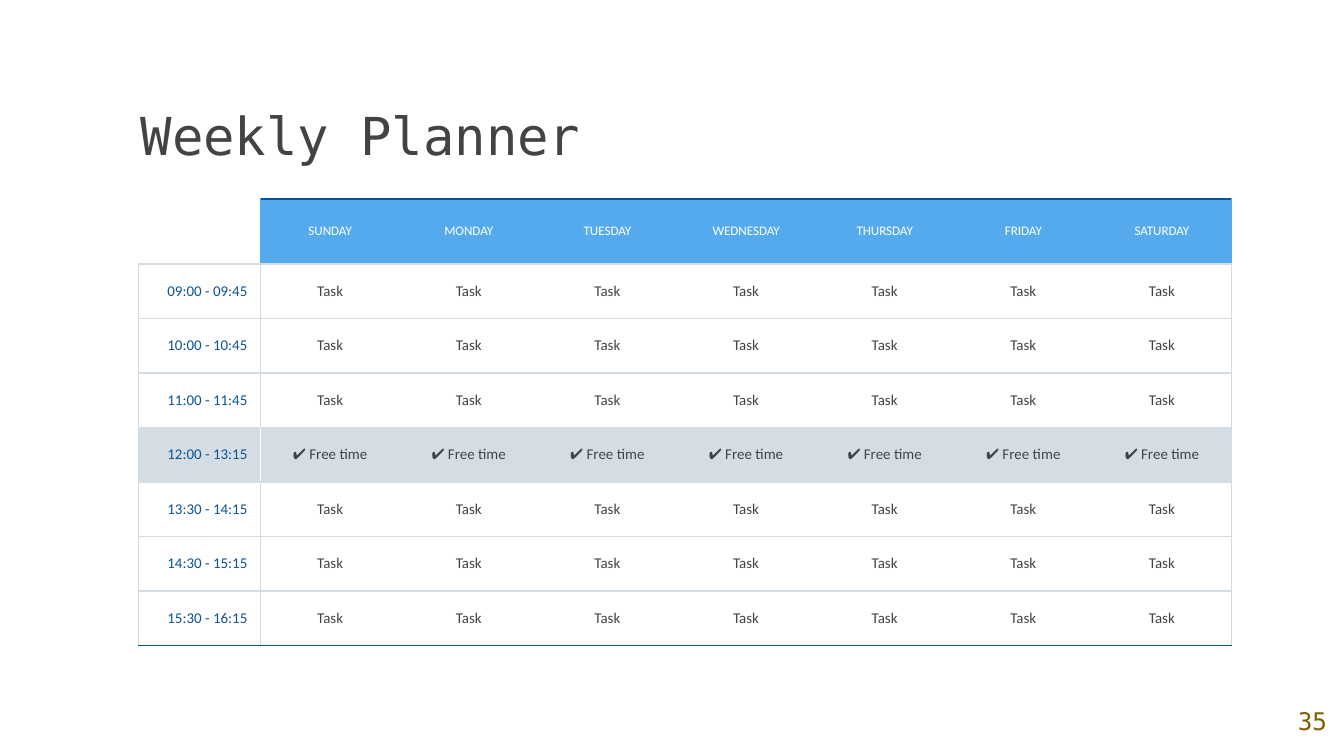
import pptx
import pptx.dml.color
import pptx.enum.text
import pptx.oxml.ns
import pptx.util
import lxml.etree

Cm = pptx.util.Cm
Align = pptx.enum.text.PP_ALIGN
Anchor = pptx.enum.text.MSO_ANCHOR

MONO, SANS = "DejaVu Sans Mono", "Calibri"
DARK, NAVY, SKY, PALE, WHITE = "434343", "0B5394", "55AAEE", "D5DDE4", "FFFFFF"
INSET = Cm(0.25)


def write(frame, text, size=8, font=SANS, color=DARK, align=Align.CENTER):
    para = frame.paragraphs[0]
    para.alignment = align
    span = para.add_run()
    span.text = text
    span.font.size = pptx.util.Pt(size)
    span.font.name = font
    span.font.color.rgb = pptx.dml.color.RGBColor.from_string(color)


def set_borders(cell, **colors):
    """Draw the left, right, top and bottom edges; None leaves an edge bare."""
    properties = cell._tc.get_or_add_tcPr()
    qn = pptx.oxml.ns.qn
    for side in ("L", "R", "T", "B"):
        line = lxml.etree.SubElement(properties, qn("a:ln" + side), w="9525")
        if colors[side] is None:
            lxml.etree.SubElement(line, qn("a:noFill"))
        else:
            solid = lxml.etree.SubElement(line, qn("a:solidFill"))
            lxml.etree.SubElement(solid, qn("a:srgbClr"), val=colors[side])


deck = pptx.Presentation()
deck.slide_width, deck.slide_height = Cm(25.4), Cm(14.29)
page = deck.slides.add_slide(deck.slide_layouts[6])

# Title and page number
for text, place, anchor, style in (
    ("Weekly Planner", (2.41, 0.99, 15.62, 2.39), Anchor.BOTTOM,
     {"size": 28, "align": Align.LEFT}),
    ("35", (24.21, 12.98, 1.19, 1.3), Anchor.MIDDLE,
     {"size": 13, "color": "7F6000"}),
):
    box = page.shapes.add_textbox(*[Cm(value) for value in place])
    frame = box.text_frame
    frame.word_wrap = True
    frame.vertical_anchor = anchor
    frame.margin_left = frame.margin_right = INSET
    frame.margin_top = frame.margin_bottom = INSET
    write(frame, text, font=MONO, **style)

# Planner contents
days = ["SUNDAY", "MONDAY", "TUESDAY", "WEDNESDAY", "THURSDAY", "FRIDAY", "SATURDAY"]
times = ["09:00 - 09:45", "10:00 - 10:45", "11:00 - 11:45", "12:00 - 13:15",
         "13:30 - 14:15", "14:30 - 15:15", "15:30 - 16:15"]
break_time = "12:00 - 13:15"
rows = [[""] + days]
for time in times:
    rows.append([time] + ["✔ Free time" if time == break_time else "Task"] * len(days))

# Planner table
widths = [2.31] + [2.62] * len(days)
heights = [1.23] + [1.03] * len(times)
table = page.shapes.add_table(len(rows), len(widths), Cm(2.62), Cm(3.76),
                              Cm(sum(widths)), Cm(sum(heights))).table
table.first_row = table.horz_banding = False
for column, width in zip(table.columns, widths):
    column.width = Cm(width)
for row, height in zip(table.rows, heights):
    row.height = Cm(height)

last_row, last_column = len(rows) - 1, len(widths) - 1
for i, values in enumerate(rows):
    header = i == 0
    free = values[0] == break_time
    side_color = SKY if header else PALE
    divider = WHITE if free else side_color
    for j, text in enumerate(values):
        cell = table.cell(i, j)
        corner = header and j == 0
        edges = {"L": None, "R": None, "T": PALE, "B": PALE}
        if header:
            edges["T"] = None if corner else NAVY
        if i == last_row:
            edges["B"] = NAVY
        if j == 0:
            edges.update(L=None if header else PALE, R=divider)
        elif j == 1:
            edges["L"] = divider
        elif j == last_column:
            edges["R"] = side_color
        set_borders(cell, **edges)

        fill = PALE if free else SKY if header and not corner else None
        if fill:
            cell.fill.solid()
            cell.fill.fore_color.rgb = pptx.dml.color.RGBColor.from_string(fill)
        else:
            cell.fill.background()
        if corner:
            continue

        cell.vertical_anchor = Anchor.MIDDLE
        cell.margin_left = cell.margin_right = INSET
        cell.margin_top = cell.margin_bottom = INSET
        if header:
            write(cell.text_frame, text, size=7, color=WHITE)
        elif j == 0:
            write(cell.text_frame, text, color=NAVY, align=Align.RIGHT)
        else:
            write(cell.text_frame, text)

deck.save("out.pptx")
